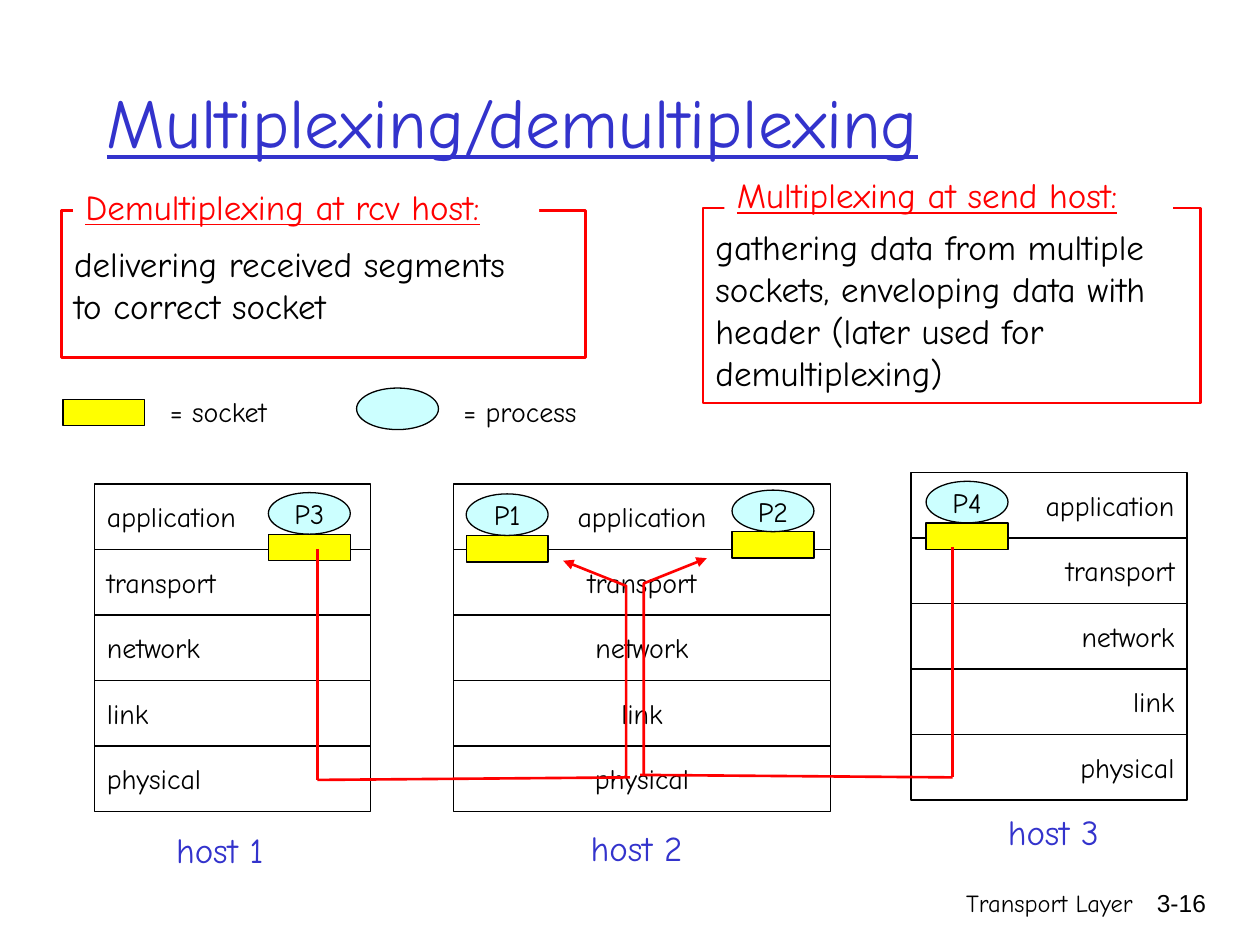
import lxml.etree
import pptx
import pptx.util
import pptx.dml.color
import pptx.enum.shapes
import pptx.enum.text
import pptx.oxml.ns

Inches = pptx.util.Inches
Pt = pptx.util.Pt
RGBColor = pptx.dml.color.RGBColor
ALIGN = pptx.enum.text.PP_ALIGN
ANCHOR = pptx.enum.text.MSO_ANCHOR
PRESET = pptx.enum.shapes.MSO_SHAPE
qn = pptx.oxml.ns.qn

BLACK = RGBColor(0x00, 0x00, 0x00)
WHITE = RGBColor(0xFF, 0xFF, 0xFF)
BLUE = RGBColor(0x33, 0x33, 0xCC)
RED = RGBColor(0xFF, 0x00, 0x00)
YELLOW = RGBColor(0xFF, 0xFF, 0x00)
PALE_CYAN = RGBColor(0xCC, 0xFF, 0xFF)

FONT = "Comic Neue"
LAYERS = ["application", "transport", "network", "link", "physical"]
LAYER_HEIGHT = 0.52
MARK_WIDTH, PROCESS_HEIGHT, SOCKET_HEIGHT = 0.65, 0.33, 0.21


def write(shape, lines, size, color=BLACK, align=ALIGN.LEFT, anchor=ANCHOR.TOP,
          underline=False, font=FONT):
    frame = shape.text_frame
    frame.word_wrap = True
    frame.vertical_anchor = anchor
    frame.text = "\n".join(lines)
    for paragraph in frame.paragraphs:
        paragraph.alignment = align
        paragraph.font.name = font
        paragraph.font.size = Pt(size)
        paragraph.font.color.rgb = color
        paragraph.font.underline = underline


def add_label(slide, box, text, size, **style):
    label = slide.shapes.add_textbox(*map(Inches, box))
    write(label, [text], size, **style)


def add_box(slide, preset, box, fill=None, line=None, width=0.75):
    shape = slide.shapes.add_shape(preset, *map(Inches, box))
    shape.shadow.inherit = False
    if fill is None:
        shape.fill.background()
    else:
        shape.fill.solid()
        shape.fill.fore_color.rgb = fill
    if line is None:
        shape.line.fill.background()
    else:
        shape.line.color.rgb = line
        shape.line.width = Pt(width)
    return shape


def add_socket(slide, left, top):
    add_box(slide, PRESET.RECTANGLE, (left, top, MARK_WIDTH, SOCKET_HEIGHT), YELLOW, BLACK)


def add_process(slide, left, top, name=None):
    process = add_box(slide, PRESET.OVAL, (left, top, MARK_WIDTH, PROCESS_HEIGHT),
                      PALE_CYAN, BLACK)
    if name:
        write(process, [name], 16, align=ALIGN.CENTER, anchor=ANCHOR.MIDDLE)
        frame = process.text_frame
        frame.margin_left = frame.margin_right = 0
        frame.margin_top = frame.margin_bottom = 0


def add_definition(slide, box, heading, heading_box, lines, text_top, text_height):
    """Red frame whose top edge is interrupted by an underlined heading."""
    left, _, width, _ = box
    add_box(slide, PRESET.RECTANGLE, box, line=RED, width=1.5)
    heading_shape = add_box(slide, PRESET.RECTANGLE, heading_box, WHITE)
    write(heading_shape, [heading], 20, RED, underline=True)
    body = slide.shapes.add_textbox(Inches(left), Inches(text_top),
                                    Inches(width + 0.1), Inches(text_height))
    write(body, lines, 20, anchor=ANCHOR.MIDDLE)


def add_legend(slide, left, top):
    add_socket(slide, left, top + 0.09)
    add_label(slide, (left + 0.75, top, 1.06, 0.37), "= socket", 16)
    add_process(slide, left + 2.33, top)
    add_label(slide, (left + 3.08, top, 1.17, 0.37), "= process", 16)


def add_host(slide, box, name, name_offset, align, processes):
    """Protocol stack with its processes, their sockets and the host name."""
    left, top, width = box
    for index, layer in enumerate(LAYERS):
        row = add_box(slide, PRESET.RECTANGLE,
                      (left, top + index * LAYER_HEIGHT, width, LAYER_HEIGHT), WHITE, BLACK)
        write(row, [layer], 16, align=align, anchor=ANCHOR.MIDDLE)
    for process, dx, dy in processes:
        add_socket(slide, left + dx, top + dy + PROCESS_HEIGHT)
        add_process(slide, left + dx, top + dy, process)
    dx, dy = name_offset
    add_label(slide, (left + dx, top + dy, 1.03, 0.43), name, 20, color=BLUE)


def add_segment(slide, start, end):
    segment = slide.shapes.add_connector(pptx.enum.shapes.MSO_CONNECTOR.STRAIGHT,
                                         *map(Inches, start + end))
    segment.line.color.rgb = RED
    segment.line.width = Pt(1.5)
    lxml.etree.SubElement(segment._element.spPr, qn("a:effectLst"))


def add_wire(slide, x, top, direction):
    """Path from a sender's socket down, across and up to a receiving socket."""
    corner = (x, top + 1.83)
    add_segment(slide, (x, top), corner)
    add_segment(slide, corner, (x + 2.48 * direction, top + 1.81))

    riser = x + 2.45 * direction
    points = [(riser, top + 1.81), (riser, top + 0.29), (riser - 0.5 * direction, top + 0.09)]
    start, *rest = [(Inches(px), Inches(py)) for px, py in points]
    builder = slide.shapes.build_freeform(*start)
    builder.add_line_segments(rest, close=False)
    rise = builder.convert_to_shape()
    rise.shadow.inherit = False
    rise.fill.background()
    rise.line.color.rgb = RED
    rise.line.width = Pt(1.5)
    outline = rise._element.spPr.find(qn("a:ln"))
    lxml.etree.SubElement(outline, qn("a:tailEnd"), type="triangle")


def main():
    deck = pptx.Presentation()
    deck.slide_width, deck.slide_height = Inches(10), Inches(7.5)
    slide = deck.slides.add_slide(deck.slide_layouts[6])

    # Title and footer
    add_label(slide, (0.75, 0.33, 8.5, 1.25), "Multiplexing/demultiplexing", 40,
              color=BLUE, anchor=ANCHOR.MIDDLE, underline=True)
    add_label(slide, (5.92, 7, 3.17, 0.5), "Transport Layer", 14, align=ALIGN.RIGHT)
    add_label(slide, (8.93, 7, 0.74, 0.5), "3-16", 14, align=ALIGN.RIGHT, font="Arial")

    # Hosts
    add_host(slide, (0.75, 3.84, 2.19), "host 1", (0.55, 2.69), ALIGN.LEFT,
             [("P3", 1.38, 0.07)])
    add_host(slide, (3.6, 3.84, 2.99), "host 2", (0.99, 2.67), ALIGN.CENTER,
             [("P1", 0.1, 0.08), ("P2", 2.21, 0.05)])
    add_host(slide, (7.23, 3.75, 2.19), "host 3", (0.67, 2.63), ALIGN.RIGHT,
             [("P4", 0.12, 0.07)])

    # Wires from hosts 1 and 3 to host 2
    add_wire(slide, 2.52, 4.36, 1)
    add_wire(slide, 7.56, 4.34, -1)

    # Legend and definitions
    add_legend(slide, 0.5, 3.08)
    add_definition(slide, (0.49, 1.67, 4.16, 1.17),
                   "Demultiplexing at rcv host:", (0.58, 1.42, 3.7, 0.43),
                   ["delivering received segments", "to correct socket"], 1.67, 1.17)
    add_definition(slide, (5.58, 1.65, 3.95, 1.55),
                   "Multiplexing at send host:", (5.75, 1.33, 3.56, 0.43),
                   ["gathering data from multiple", "sockets, enveloping data with",
                    "header (later used for", "demultiplexing)"], 1.74, 1.43)

    deck.save("out.pptx")


if __name__ == "__main__":
    main()
